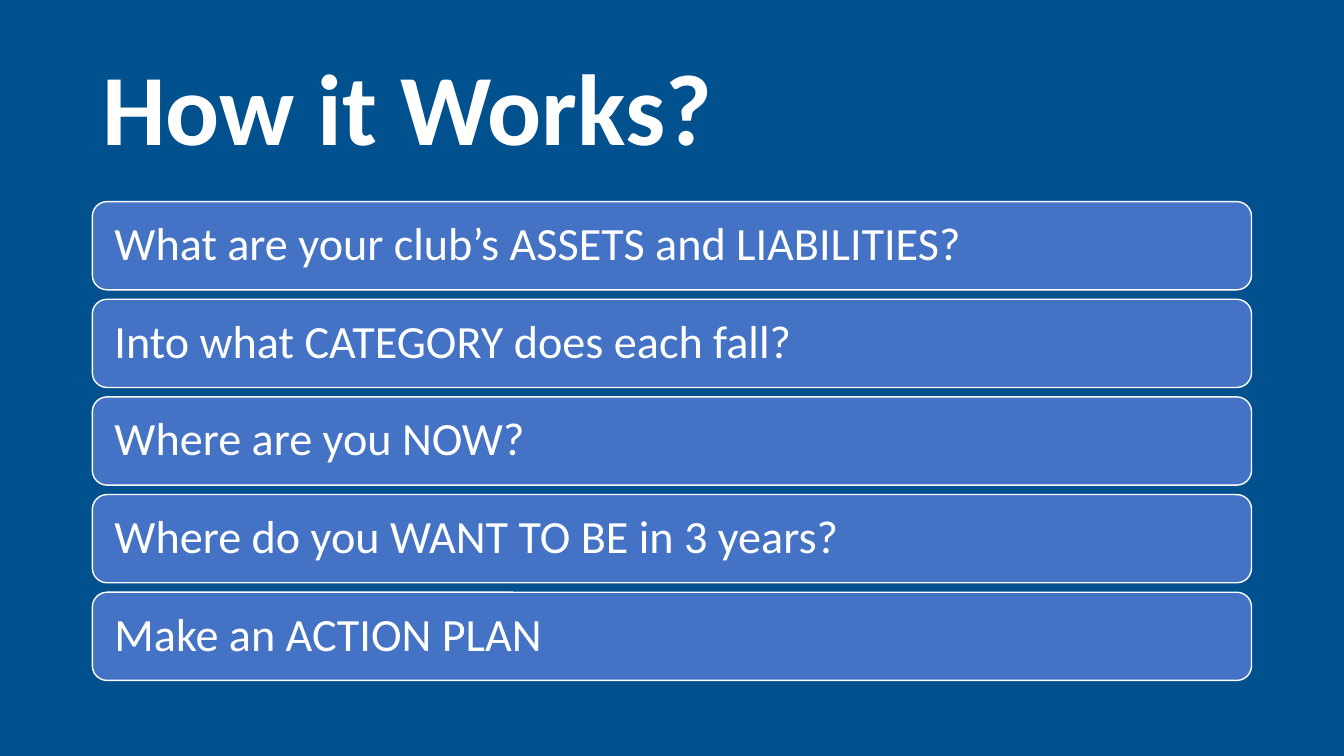
from pptx import Presentation
from pptx.dml.color import RGBColor
from pptx.enum.shapes import MSO_SHAPE
from pptx.enum.text import MSO_ANCHOR, MSO_AUTO_SIZE, PP_ALIGN
from pptx.util import Pt

PX = 9525  # EMU per px, 96 px to the inch
COLORS = {"background": "00518E", "bar": "4472C4", "white": "FFFFFF"}
FONT = "Calibri"
QUESTIONS = [
    "What are your club’s ASSETS and LIABILITIES?",
    "Into what CATEGORY does each fall?",
    "Where are you NOW?",
    "Where do you WANT TO BE in 3 years?",
    "Make an ACTION PLAN",
]


def px(n):
    return n * PX


def color(name):
    return RGBColor.from_string(COLORS[name])


def write(tf, text, size, bold=False, margin=None):
    tf.word_wrap = True
    tf.auto_size = MSO_AUTO_SIZE.NONE
    tf.vertical_anchor = MSO_ANCHOR.MIDDLE
    if margin is not None:
        tf.margin_left = tf.margin_right = px(margin)
    p = tf.paragraphs[0]
    p.alignment = PP_ALIGN.LEFT
    p.line_spacing = 0.9
    r = p.add_run()
    r.text = text
    r.font.name = FONT
    r.font.size = Pt(size)
    r.font.bold = bold
    r.font.color.rgb = color("white")


def place_title(s, text, left, top, width, height):
    sp = s.shapes.title
    sp.left, sp.top, sp.width, sp.height = map(px, (left, top, width, height))
    write(sp.text_frame, text, size=72, bold=True)


def place_bars(s, texts, left, top, width, height, gap=9):
    bar_height = (height - gap * (len(texts) - 1)) // len(texts)
    for i, text in enumerate(texts):
        y = top + i * (bar_height + gap)
        sp = s.shapes.add_shape(MSO_SHAPE.ROUNDED_RECTANGLE,
                                px(left), px(y), px(width), px(bar_height))
        sp.shadow.inherit = False
        sp.fill.solid()
        sp.fill.fore_color.rgb = color("bar")
        sp.line.color.rgb = color("white")
        sp.line.width = Pt(1)
        write(sp.text_frame, text, size=33, margin=17)


def main():
    prs = Presentation()
    prs.slide_width, prs.slide_height = px(1280), px(720)

    # Title-only slide on a plain background
    s = prs.slides.add_slide(prs.slide_layouts[5])
    s.background.fill.solid()
    s.background.fill.fore_color.rgb = color("background")

    # Heading, then the stack of question bars
    place_title(s, "How it Works?", 88, 38, 1104, 139)
    place_bars(s, QUESTIONS, 88, 192, 1104, 456)

    prs.save("out.pptx")


if __name__ == "__main__":
    main()
